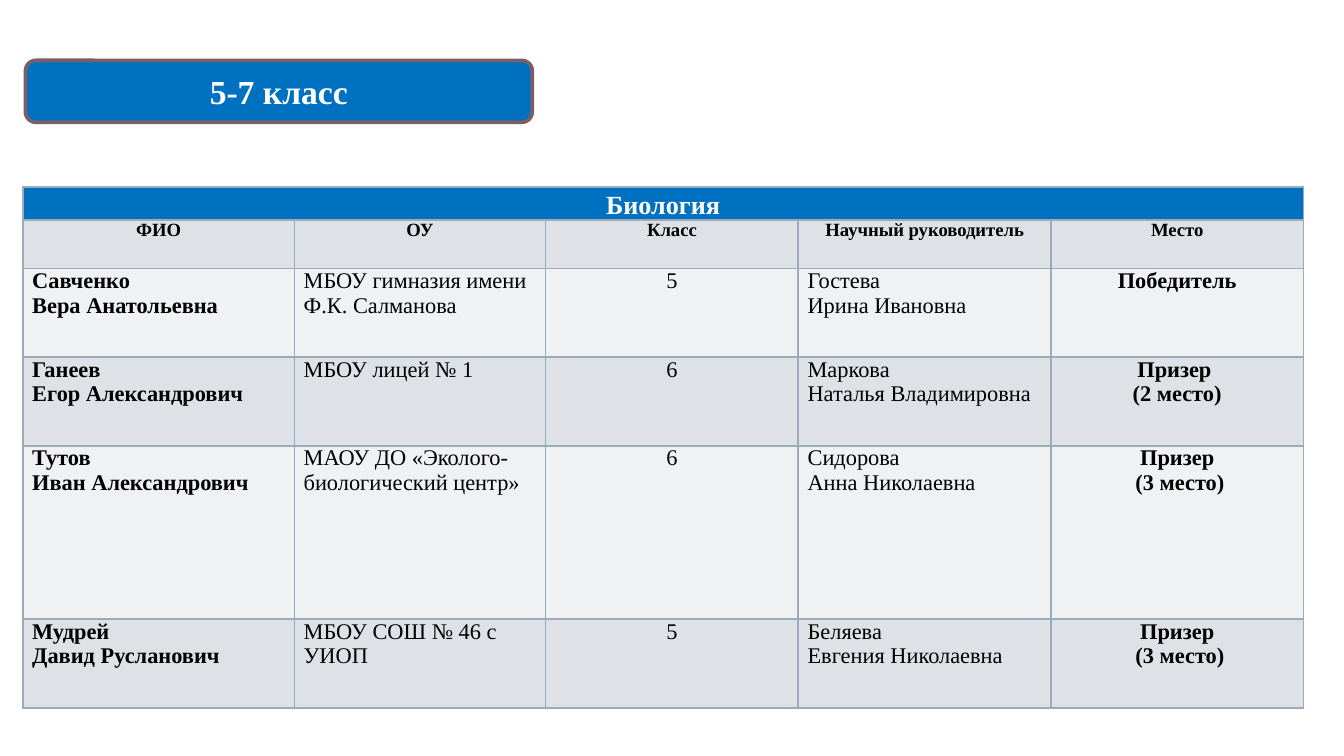
from lxml.etree import SubElement
from pptx import Presentation
from pptx.dml.color import RGBColor
from pptx.enum.shapes import MSO_SHAPE
from pptx.enum.text import MSO_ANCHOR, PP_ALIGN
from pptx.oxml.ns import qn
from pptx.util import Inches, Pt

COLUMN_WIDTHS = [2.02, 1.87, 1.88, 1.88, 1.88]
ROW_HEIGHTS = [0.24, 0.36, 0.66, 0.66, 1.29, 0.66]
HEADINGS = ["ФИО", "ОУ", "Класс", "Научный руководитель", "Место"]
# A new line starts a paragraph; \v is a line break inside one.
WINNERS = [
    ["Савченко\nВера Анатольевна", "МБОУ гимназия имени \vФ.К. Салманова", "5",
     "Гостева\nИрина Ивановна", "Победитель"],
    ["Ганеев\nЕгор Александрович", "МБОУ лицей № 1", "6",
     "Маркова\nНаталья Владимировна", "Призер \n(2 место)"],
    ["Тутов\nИван Александрович", "МАОУ ДО «Эколого-биологический центр»", "6",
     "Сидорова\nАнна Николаевна", "Призер\n (3 место)"],
    ["Мудрей\nДавид Русланович", "МБОУ СОШ № 46 с УИОП", "5",
     "Беляева\nЕвгения Николаевна", "Призер\n (3 место)"],
]
CENTERED_COLUMNS = {2, 4}
BOLD_COLUMNS = {0, 4}


def color(hex_text):
    return RGBColor.from_string(hex_text)


def write_text(text_frame, text, size=12, bold=False, font_color="000000",
               centered=False, line_spacing=None, font_name="Times New Roman"):
    text_frame.text = text
    for paragraph in text_frame.paragraphs:
        paragraph.alignment = PP_ALIGN.CENTER if centered else PP_ALIGN.LEFT
        paragraph.line_spacing = line_spacing
        for run in paragraph.runs:
            run.font.name = font_name
            run.font.size = Pt(size)
            run.font.bold = bold
            run.font.color.rgb = color(font_color)
        for line_break in paragraph._p.findall(qn("a:br")):
            SubElement(line_break, qn("a:rPr"), sz=str(size * 100))


class SlideBuilder:
    blue = "0070C0"
    white = "FFFFFF"
    banner_line = "7B5F68"
    border = "9BABB9"
    bands = ["EFF1F3", "DEE2E6"]

    def __init__(self, slide):
        self.slide = slide

    def add_banner(self, text, left, top, width, height):
        shape = self.slide.shapes.add_shape(
            MSO_SHAPE.ROUNDED_RECTANGLE,
            Inches(left), Inches(top), Inches(width), Inches(height))
        shape.shadow.inherit = False
        shape.fill.solid()
        shape.fill.fore_color.rgb = color(self.blue)
        shape.line.color.rgb = color(self.banner_line)
        shape.line.width = Pt(2)
        shape.text_frame.vertical_anchor = MSO_ANCHOR.MIDDLE
        write_text(shape.text_frame, text, size=18, bold=True,
                   font_color=self.white, centered=True)

    def style_cell(self, cell, fill):
        cell.margin_left = cell.margin_right = Inches(0.07)
        cell.margin_top = cell.margin_bottom = 0
        properties = cell._tc.get_or_add_tcPr()
        for side in ("lnL", "lnR", "lnT", "lnB"):
            line = SubElement(properties, qn(f"a:{side}"), w=str(Pt(1)))
            line_fill = SubElement(line, qn("a:solidFill"))
            SubElement(line_fill, qn("a:srgbClr"), val=self.border)
        cell.fill.solid()
        cell.fill.fore_color.rgb = color(fill)

    def add_results_table(self, subject, left, top):
        table = self.slide.shapes.add_table(
            len(ROW_HEIGHTS), len(COLUMN_WIDTHS), Inches(left), Inches(top),
            Inches(sum(COLUMN_WIDTHS)), Inches(sum(ROW_HEIGHTS))).table
        for column, width in zip(table.columns, COLUMN_WIDTHS):
            column.width = Inches(width)
        for row, height in zip(table.rows, ROW_HEIGHTS):
            row.height = Inches(height)

        title = table.cell(0, 0)
        title.merge(table.cell(0, len(COLUMN_WIDTHS) - 1))
        for cell in table.rows[0].cells:
            self.style_cell(cell, self.blue)
        write_text(title.text_frame, subject, size=14, bold=True,
                   font_color=self.white, centered=True, line_spacing=1.15)

        for row_index, texts in enumerate([HEADINGS] + WINNERS, start=1):
            heading = row_index == 1
            for column_index, text in enumerate(texts):
                cell = table.cell(row_index, column_index)
                self.style_cell(cell, self.bands[row_index % 2])
                write_text(cell.text_frame, text, size=10 if heading else 12,
                           bold=heading or column_index in BOLD_COLUMNS,
                           centered=heading or column_index in CENTERED_COLUMNS)


def main():
    presentation = Presentation()
    presentation.slide_width = Inches(10)
    presentation.slide_height = Inches(10) * 9 // 16
    slide = presentation.slides.add_slide(presentation.slide_layouts[6])
    builder = SlideBuilder(slide)
    builder.add_results_table("Биология", 0.17, 1.39)
    builder.add_banner("5-7 класс", 0.19, 0.45, 3.77, 0.46)
    presentation.save("out.pptx")


if __name__ == "__main__":
    main()
